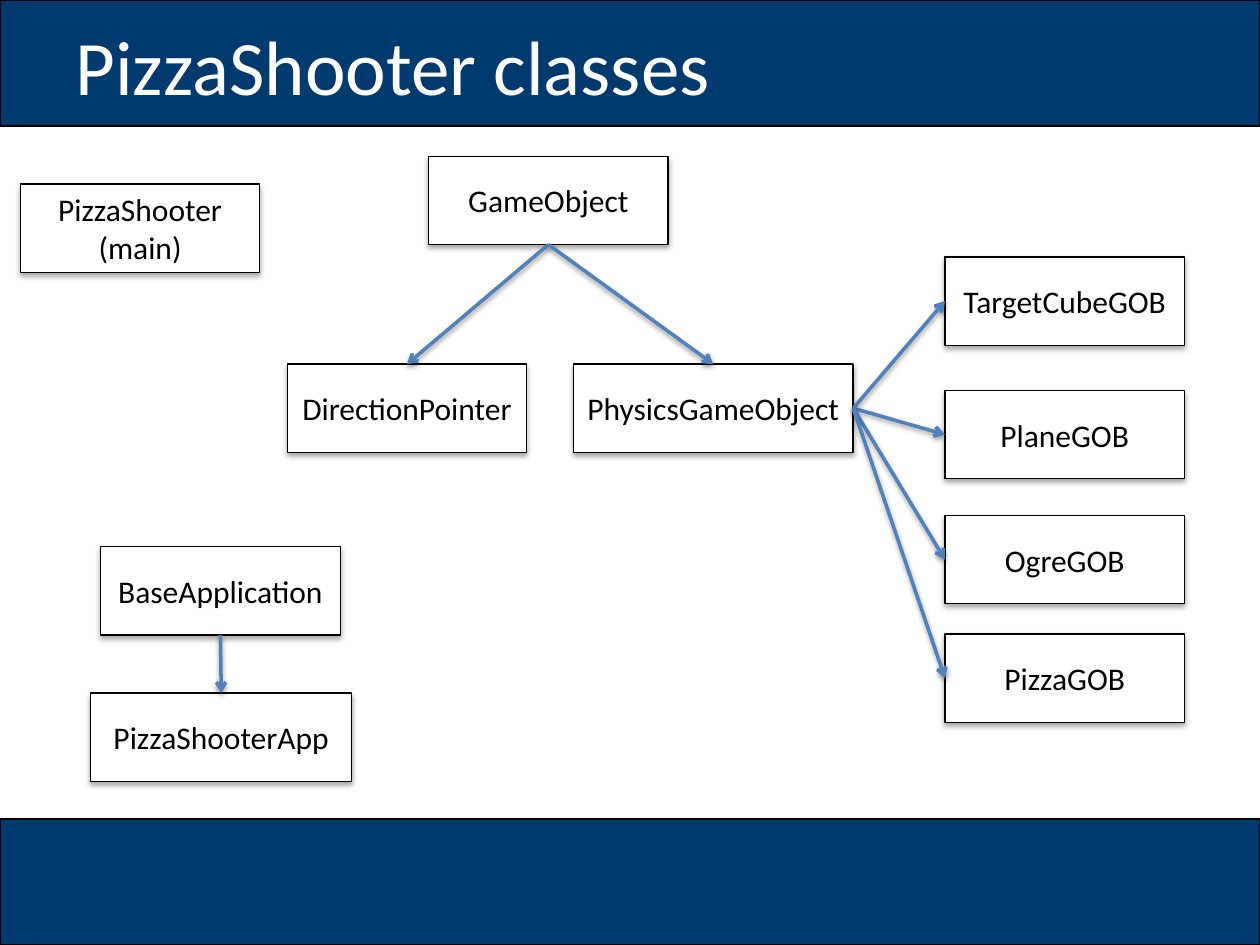
from lxml import etree
from pptx import Presentation
from pptx import util as u
from pptx.dml.color import RGBColor
from pptx.enum import shapes, text
from pptx.oxml.ns import qn

COLORS = {"navy": "003A6E", "white": "FFFFFF", "black": "000000", "blue": "4F81BD"}
TOP, LEFT, BOTTOM, RIGHT = range(4)


def rgb(name):
    return RGBColor.from_string(COLORS[name])


class Deck:
    font = "Calibri"
    width, height = 25.4, 19.05

    def __init__(self):
        self.prs = Presentation()
        self.prs.slide_width = u.Cm(self.width)
        self.prs.slide_height = u.Cm(self.height)
        self.slide = self.prs.slides.add_slide(self.prs.slide_layouts[5])

    def label(self, para, words, size, color):
        run = para.add_run()
        run.text = words
        run.font.name = self.font
        run.font.size = u.Pt(size)
        run.font.color.rgb = rgb(color)

    def rect(self, x, y, w, h, fill):
        shape = self.slide.shapes.add_shape(
            shapes.MSO_SHAPE.RECTANGLE, u.Cm(x), u.Cm(y), u.Cm(w), u.Cm(h))
        shape.fill.solid()
        shape.fill.fore_color.rgb = rgb(fill)
        shape.line.color.rgb = rgb("black")
        shape.line.width = u.Pt(0.75)
        shape.shadow.inherit = False
        return shape

    def shade(self, effects, dist, alpha):
        outer = etree.SubElement(
            effects, qn("a:outerShdw"), blurRad=str(u.Pt(3.1)),
            dist=str(u.Pt(dist)), dir="5400000", rotWithShape="0")
        color = etree.SubElement(outer, qn("a:srgbClr"), val=COLORS["black"])
        etree.SubElement(color, qn("a:alpha"), val=str(alpha * 1000))

    def title(self, words):
        title = self.slide.shapes.title
        title.left, title.top = u.Cm(1.27), u.Cm(0.08)
        title.width, title.height = u.Cm(22.86), u.Cm(2.46)
        frame = title.text_frame
        frame.vertical_anchor = text.MSO_ANCHOR.MIDDLE
        frame.paragraphs[0].alignment = text.PP_ALIGN.LEFT
        self.label(frame.paragraphs[0], words, 44, "white")
        # Bring the title in front of the bands
        self.slide.shapes._spTree.append(title._element)

    def box(self, x, y, *lines, w=4.83):
        shape = self.rect(x, y, w, 1.78, "white")
        self.shade(shape._element.spPr.find(qn("a:effectLst")), 1.8, 35)
        frame = shape.text_frame
        frame.word_wrap = True
        frame.vertical_anchor = text.MSO_ANCHOR.MIDDLE
        for i, line in enumerate(lines):
            para = frame.add_paragraph() if i else frame.paragraphs[0]
            para.alignment = text.PP_ALIGN.CENTER
            self.label(para, line, 18, "black")
        return shape

    def arrow(self, start, out, end, into):
        line = self.slide.shapes.add_connector(
            shapes.MSO_CONNECTOR.STRAIGHT, 0, 0, 0, 0)
        line.begin_connect(start, out)
        line.end_connect(end, into)
        line.line.color.rgb = rgb("blue")
        line.line.width = u.Pt(2)
        etree.SubElement(line.line._get_or_add_ln(), qn("a:tailEnd"), type="arrow")
        effects = etree.SubElement(line._element.spPr, qn("a:effectLst"))
        self.shade(effects, 1.6, 38)


def main():
    deck = Deck()

    # Bands and title
    band = 2.54
    for y in (deck.height - band, 0):
        deck.rect(0, y, deck.width, band, "navy")
    deck.title("PizzaShooter classes")

    # Program and application classes
    deck.box(0.41, 3.71, "PizzaShooter", "(main)")
    base = deck.box(2.03, 11.02, "BaseApplication")
    app = deck.box(1.83, 13.97, "PizzaShooterApp", w=5.26)

    # Game object classes
    game = deck.box(8.64, 3.15, "GameObject")
    point = deck.box(5.79, 7.34, "DirectionPointer")
    phys = deck.box(11.56, 7.34, "PhysicsGameObject", w=5.64)
    kinds = [deck.box(19.05, y, name) for name, y in (
        ("TargetCubeGOB", 5.18), ("PlaneGOB", 7.87),
        ("OgreGOB", 10.39), ("PizzaGOB", 12.78))]

    # Inheritance arrows
    for start, end in ((game, point), (game, phys), (base, app)):
        deck.arrow(start, BOTTOM, end, TOP)
    for kind in kinds:
        deck.arrow(phys, RIGHT, kind, LEFT)

    deck.prs.save("out.pptx")


if __name__ == "__main__":
    main()
